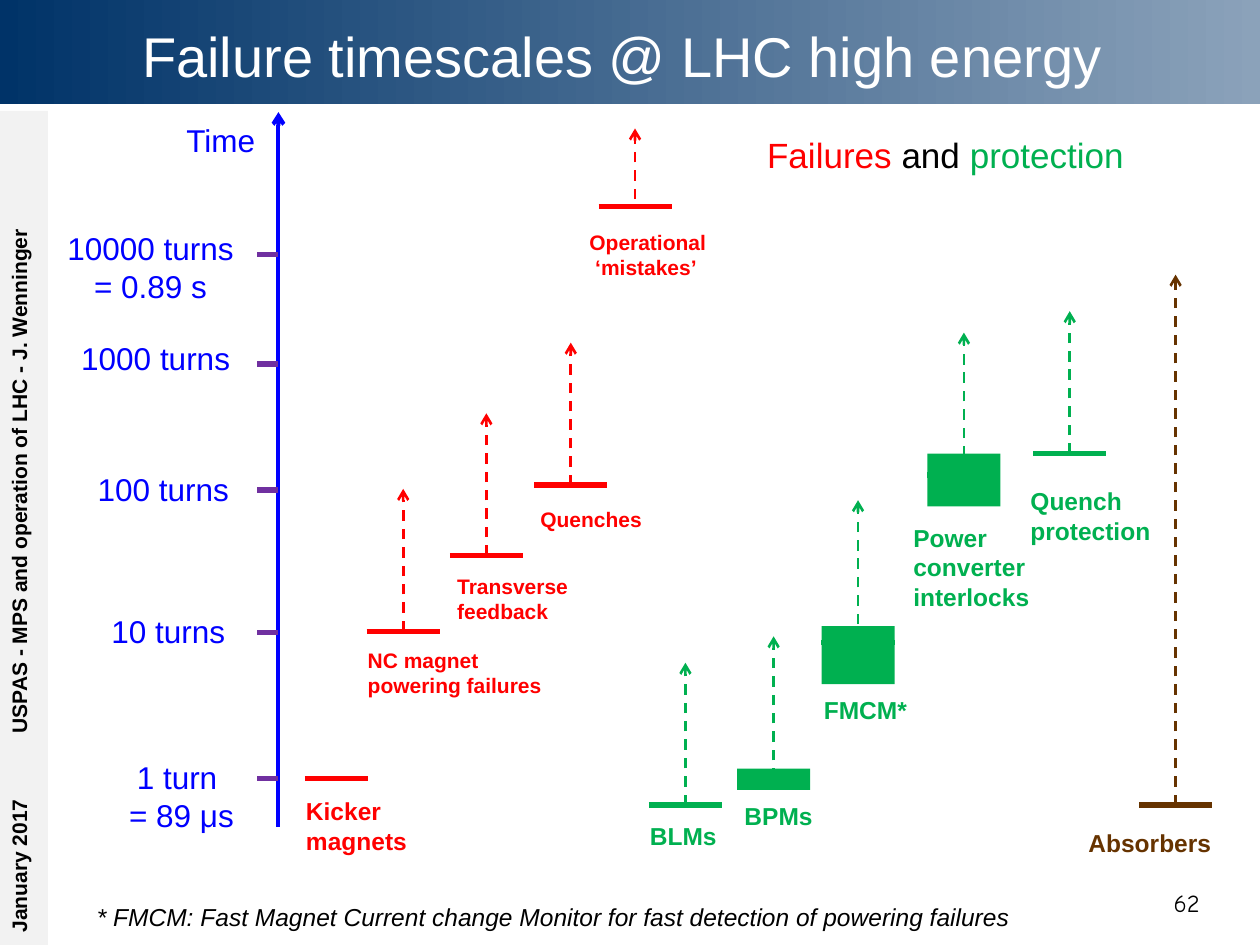
"""Build the slide on LHC failure timescales and machine protection."""
from lxml.etree import SubElement
from pptx import Presentation
from pptx.dml.color import RGBColor
from pptx.enum.dml import MSO_LINE
from pptx.enum.shapes import MSO_CONNECTOR, MSO_SHAPE
from pptx.enum.text import MSO_ANCHOR, PP_ALIGN
from pptx.oxml.ns import qn
from pptx.util import Inches, Pt

WHITE = RGBColor(0xFF, 0xFF, 0xFF)
BLACK = RGBColor(0, 0, 0)
NAVY = RGBColor(0x00, 0x33, 0x68)
STEEL = RGBColor(0x8B, 0xA2, 0xBA)
GREY = RGBColor(0xF2, 0xF2, 0xF2)
BLUE = RGBColor(0, 0, 0xFF)
PURPLE = RGBColor(0x70, 0x30, 0xA0)
RED = RGBColor(0xFF, 0, 0)
GREEN = RGBColor(0x00, 0xB0, 0x50)
BROWN = RGBColor(0x66, 0x33, 0x00)
LEFT, CENTER, RIGHT = PP_ALIGN.LEFT, PP_ALIGN.CENTER, PP_ALIGN.RIGHT

prs = Presentation()
prs.slide_width, prs.slide_height = Inches(10), Inches(7.5)
COL, ROW = prs.slide_width // 100, prs.slide_height // 75
s = prs.slides.add_slide(prs.slide_layouts[6])


def add_text(box, lines, size, color, bold=False, align=LEFT, wrap=False, font="Arial"):
    x, y, w, h = box
    sp = s.shapes.add_textbox(round(x * COL), round(y * ROW), round(w * COL), round(h * ROW))
    tf = sp.text_frame
    tf.word_wrap = wrap
    tf.text = "\n".join(lines)
    for p in tf.paragraphs:
        p.alignment = align
        for r in p.runs:
            r.font.name, r.font.size, r.font.bold = font, Pt(size), bold
            r.font.color.rgb = color
    return sp


def add_line(x1, y1, x2, y2, color, width, arrow=False, dash=False):
    sp = s.shapes.add_connector(MSO_CONNECTOR.STRAIGHT, round(x1 * COL), round(y1 * ROW),
                                round(x2 * COL), round(y2 * ROW))
    sp.line.color.rgb, sp.line.width = color, Pt(width)
    if dash:
        sp.line.dash_style = MSO_LINE.DASH
    if arrow:
        SubElement(sp.line._get_or_add_ln(), qn("a:tailEnd"), type="arrow")
    SubElement(sp._element.spPr, qn("a:effectLst"))


sp = s.shapes.add_shape(MSO_SHAPE.RECTANGLE, 0, 0, prs.slide_width, round(8.3 * ROW))
sp.shadow.inherit = False
sp.line.fill.background()
sp.fill.gradient()
sp.fill.gradient_angle = 0
for stop, color in zip(sp.fill.gradient_stops, (NAVY, STEEL)):
    stop.color.rgb = color
sp = add_text((8.8, 0, 81.2, 8.8), ["Failure timescales @ LHC high energy"], 32, WHITE,
              align=CENTER, wrap=True)
sp.text_frame.vertical_anchor = MSO_ANCHOR.MIDDLE

side_notes = [
    ((-6, 65.2, 15.8, 3.8), "January 2017"),
    ((-23.3, 32.1, 50.4, 3.8), "USPAS - MPS and operation of LHC - J. Wenninger"),
]
for box, note in side_notes:
    sp = add_text(box, [note], 12, BLACK, bold=True, wrap=True)
    sp.rotation = 270
    sp.fill.solid()
    sp.fill.fore_color.rgb = GREY
add_text((86.2, 70, 10, 3.5), ["62"], 14, BLACK, align=RIGHT, wrap=True, font="Comic Neue")

AXIS = 22.1
add_line(AXIS, 65.6, AXIS, 8.9, BLUE, 2.25, arrow=True)
add_text((13.8, 9.1, 7.8, 4), ["Time"], 18, BLUE)
ticks = [
    (61.8, (9.2, 59.7, 10.4, 7.1), ["1 turn ", "= 89 μs"]),
    (50.2, (7.8, 48.1, 11.1, 4), ["10 turns"]),
    (38.9, (6.7, 36.8, 12.5, 4), ["100 turns"]),
    (28.9, (5.4, 26.4, 13.9, 4), ["1000 turns"]),
    (20.2, (4.3, 17.7, 15.3, 7.1), ["10000 turns", "= 0.89 s"]),
]
for y, box, lines in ticks:
    add_line(AXIS - 1.7, y, AXIS, y, PURPLE, 3)
    add_text(box, lines, 18, BLUE, align=CENTER)

RISE = 11.3
events = [
    (26.7, 5, 61.8, None, None, (23.3, 62.7, 10.1, 5.7), ["Kicker", "magnets"], 14, RED),
    (32, 5.8, 50.1, 50.1, RISE, (28.2, 50.9, 15.9, 5.1), ["NC magnet", "powering failures"], 12, RED),
    (38.6, 5.8, 44.1, 44.1, RISE, (35.3, 45, 10.9, 5.1), ["Transverse", "feedback"], 12, RED),
    (45.3, 5.8, 38.5, 38.5, RISE, (41.9, 39.7, 10.2, 3), ["Quenches"], 12, RED),
    (50.4, 5.8, 16.4, 15.8, 5.6, (45.8, 17.7, 11.4, 5.1), ["Operational", " ‘mistakes’"], 12, RED),
    (54.4, 5.8, 63.9, 63.9, RISE, (50.6, 64.7, 7.3, 3.4), ["BLMs"], 14, GREEN),
    (61.4, 5.8, 61.8, 61.8, RISE, (58.1, 63.1, 7.5, 3.4), ["BPMs"], 14, GREEN),
    (68.1, 5.8, 51, 51, RISE, (64.4, 54.7, 8.7, 3.4), ["FMCM*"], 14, GREEN),
    (76.5, 5.8, 37.7, 37.7, RISE, (71.5, 41, 11.2, 8.1), ["Power converter", "interlocks"], 14, GREEN),
    (84.9, 5.8, 36, 36, RISE, (80.8, 38.1, 11.6, 5.7), ["Quench", "protection"], 14, GREEN),
    (93.3, 5.8, 63.9, 63.9, 42.1, (85.4, 65.2, 12.4, 3.4), ["Absorbers"], 14, BROWN),
]
blocks = {"BPMs": (61, 1.7), "FMCM*": (49.7, 4.6), "Power converter": (36, 4.2)}
wrapped = ("Power converter", "Absorbers")
for x, width, y, start, rise, box, lines, size, color in events:
    left = x - width / 2
    add_text(box, lines, size, color, bold=True, wrap=lines[0] in wrapped)
    if lines[0] in blocks:
        top, height = blocks[lines[0]]
        sp = s.shapes.add_shape(MSO_SHAPE.RECTANGLE, round(left * COL), round(top * ROW),
                                round(width * COL), round(height * ROW))
        sp.shadow.inherit = False
        sp.fill.solid()
        sp.fill.fore_color.rgb = color
        sp.line.fill.background()
    add_line(left, y, left + width, y, color, 3)
    if rise:
        add_line(x, start, x, start - rise, color, 1.5, arrow=True, dash=True)

sp = add_text((59.9, 10.1, 30.6, 4.4), ["Failures"], 20, RED)
p = sp.text_frame.paragraphs[0]
for word, color in ((" and ", BLACK), ("protection", GREEN)):
    r = p.add_run()
    r.text = word
    r.font.name, r.font.size = "Arial", Pt(20)
    r.font.color.rgb = color

sp = add_text((6.7, 71.1, 74.8, 3.4),
              ["* FMCM: Fast Magnet Current change Monitor for fast detection of powering failures"],
              14, BLACK)
sp.text_frame.paragraphs[0].runs[0].font.italic = True

prs.save("out.pptx")
